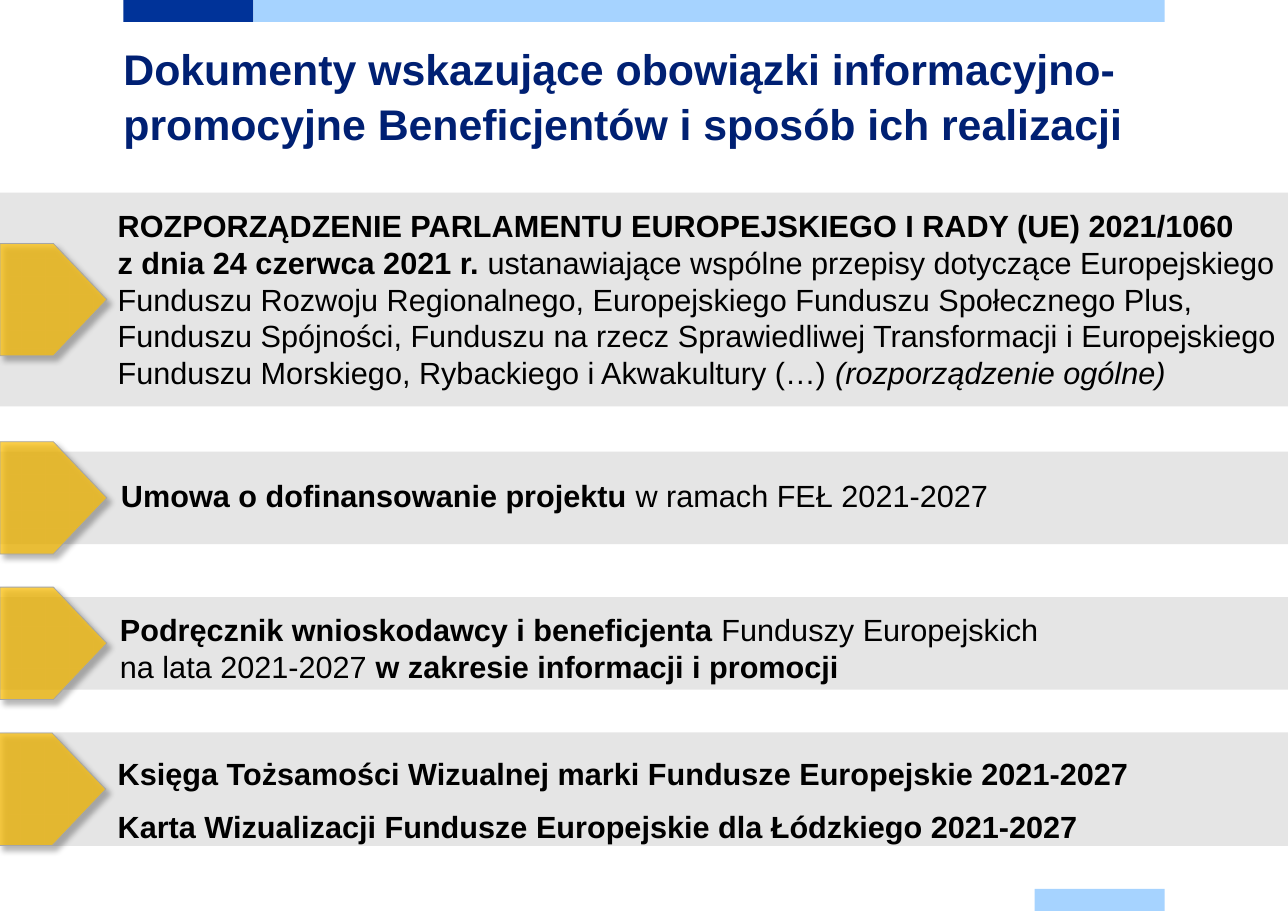
from lxml import etree
from pptx import Presentation
from pptx import util as u
from pptx.dml.color import RGBColor
from pptx.enum import shapes, text
from pptx.oxml import ns

WIDTH, HEIGHT = 11.69, 8.27
MARGIN = 1.12
NAVY, SKY = "003399", "A6D3FF"
BODY_FONT = {"name": "Arial", "size": u.Pt(20)}
TITLE_FONT = {"name": "Arial", "size": u.Pt(28), "bold": True}
BOLD, PLAIN, ITALIC = {"bold": True}, {"bold": False}, {"bold": False, "italic": True}

BANDS = [
    {"box": (0, 1.75, WIDTH, 1.94), "text_at": (0.97, 1.83, 10.73, 1.78), "paragraphs": [[
        ("ROZPORZĄDZENIE PARLAMENTU EUROPEJSKIEGO I RADY (UE) 2021/1060 \n"
         "z dnia 24 czerwca 2021 r. ", BOLD),
        ("ustanawiające wspólne przepisy dotyczące Europejskiego Funduszu Rozwoju "
         "Regionalnego, Europejskiego Funduszu Społecznego Plus, Funduszu Spójności, "
         "Funduszu na rzecz Sprawiedliwej Transformacji i Europejskiego Funduszu "
         "Morskiego, Rybackiego i Akwakultury (…) ", PLAIN),
        ("(rozporządzenie ogólne)", ITALIC)]]},
    {"box": (0, 4.1, WIDTH, 0.84), "text_at": (1, 4.28, 10.7, 0.44), "paragraphs": [[
        ("Umowa o dofinansowanie projektu ", BOLD),
        ("w ramach FEŁ 2021-2027", PLAIN)]]},
    {"box": (0, 5.42, WIDTH, 0.84), "text_at": (0.99, 5.5, 10.7, 0.77), "paragraphs": [[
        ("Podręcznik wnioskodawcy i beneficjenta ", BOLD),
        ("Funduszy Europejskich \nna lata 2021-2027 ", PLAIN),
        ("w zakresie informacji i promocji", BOLD)]]},
    {"box": (-0.01, 6.65, 11.7, 1.03), "text_at": (0.97, 6.65, 10.7, 1.05), "spacing": u.Pt(35),
     "paragraphs": [
        [("Księga Tożsamości Wizualnej marki Fundusze Europejskie 2021-2027", BOLD)],
        [("Karta Wizualizacji Fundusze Europejskie dla Łódzkiego 2021-2027", BOLD)]]},
]


def color(value):
    """Turn a hex string into a colour."""
    return RGBColor.from_string(value)


def set_all(target, values):
    """Set every attribute named in a dict of format values."""
    for name, value in values.items():
        setattr(target, name, value)


def set_alpha(parent, percent):
    """Set the opacity of the first colour under an element."""
    tint = parent.find(".//" + ns.qn("a:srgbClr"))
    etree.SubElement(tint, ns.qn("a:alpha"), val=str(percent * 1000))


def add_block(slide, kind, box, fill, opacity=100):
    """Add a filled shape without outline or shadow."""
    block = slide.shapes.add_shape(kind, *map(u.Inches, box))
    block.shadow.inherit = False
    block.fill.solid()
    block.fill.fore_color.rgb = color(fill)
    block.line.fill.background()
    if opacity < 100:
        set_alpha(block.fill._xPr, opacity)
    return block


def add_frame(slide):
    """Add the coloured strips at the top and bottom edges."""
    tab, depth, right = 1.18, 0.2, 10.57
    strips = [((MARGIN, 0, tab, depth), NAVY),
              ((MARGIN + tab, 0, right - MARGIN - tab, depth), SKY),
              ((right - tab, HEIGHT - depth, tab, depth), SKY)]
    for box, fill in strips:
        add_block(slide, shapes.MSO_SHAPE.RECTANGLE, box, fill)


def add_title(slide, box, wording):
    """Place and format the slide title."""
    title = slide.shapes.title
    set_all(title, dict(zip(("left", "top", "width", "height"), map(u.Inches, box))))
    frame = title.text_frame
    frame.text = wording
    set_all(frame, {"margin_left": 0, "margin_top": 0, "margin_right": 0, "margin_bottom": 0,
                    "word_wrap": True, "auto_size": text.MSO_AUTO_SIZE.NONE,
                    "vertical_anchor": text.MSO_ANCHOR.TOP})
    heading = frame.paragraphs[0]
    set_all(heading, {"alignment": text.PP_ALIGN.LEFT, "line_spacing": u.Pt(36)})
    set_all(heading.runs[0].font, TITLE_FONT)
    heading.runs[0].font.color.rgb = color("002073")


def add_pointer(slide, box):
    """Add the yellow pointer, centred on the left end of a band."""
    left, top, _, height = box
    size = 1.02
    pointer = add_block(slide, shapes.MSO_SHAPE.PENTAGON,
                        (left, top + (height - size) / 2, 0.97, size), "FFC000", 70)
    pointer.line.color.rgb = color("A6A6A6")
    pointer.line.width = u.Pt(0.5)
    effects = pointer._element.spPr.find(ns.qn("a:effectLst"))
    shadow = etree.SubElement(effects, ns.qn("a:outerShdw"), blurRad=str(u.Pt(4)),
                              dist=str(u.Pt(4)), dir=str(45 * 60000), algn="tl", rotWithShape="0")
    etree.SubElement(shadow, ns.qn("a:srgbClr"), val="000000")
    set_alpha(shadow, 40)


def add_wording(slide, box, paragraphs, spacing):
    """Add the wording of a band, with its mixed formats."""
    frame = slide.shapes.add_textbox(*map(u.Inches, box)).text_frame
    frame.word_wrap = True
    for number, parts in enumerate(paragraphs):
        paragraph = frame.add_paragraph() if number else frame.paragraphs[0]
        paragraph.line_spacing = spacing
        for wording, style in parts:
            for row, line in enumerate(wording.split("\n")):
                if row:
                    paragraph.add_line_break()
                run = paragraph.add_run()
                run.text = line
                set_all(run.font, BODY_FONT | style)
                run.font.color.rgb = color("000000")


def add_band(slide, box, text_at, paragraphs, spacing=None):
    """Add a grey band with its wording and pointer."""
    add_block(slide, shapes.MSO_SHAPE.RECTANGLE, box, "BFBFBF", 40)
    add_wording(slide, text_at, paragraphs, spacing)
    add_pointer(slide, box)


def main():
    """Build and save the slide."""
    deck = Presentation()
    deck.slide_width, deck.slide_height = u.Inches(WIDTH), u.Inches(HEIGHT)
    slide = deck.slides.add_slide(deck.slide_layouts[5])
    add_frame(slide)
    add_title(slide, (MARGIN, 0.35, 9.53, 1.02),
              "Dokumenty wskazujące obowiązki informacyjno-promocyjne "
              "Beneficjentów i sposób ich realizacji")
    for band in BANDS:
        add_band(slide, **band)
    deck.save("out.pptx")


if __name__ == "__main__":
    main()
